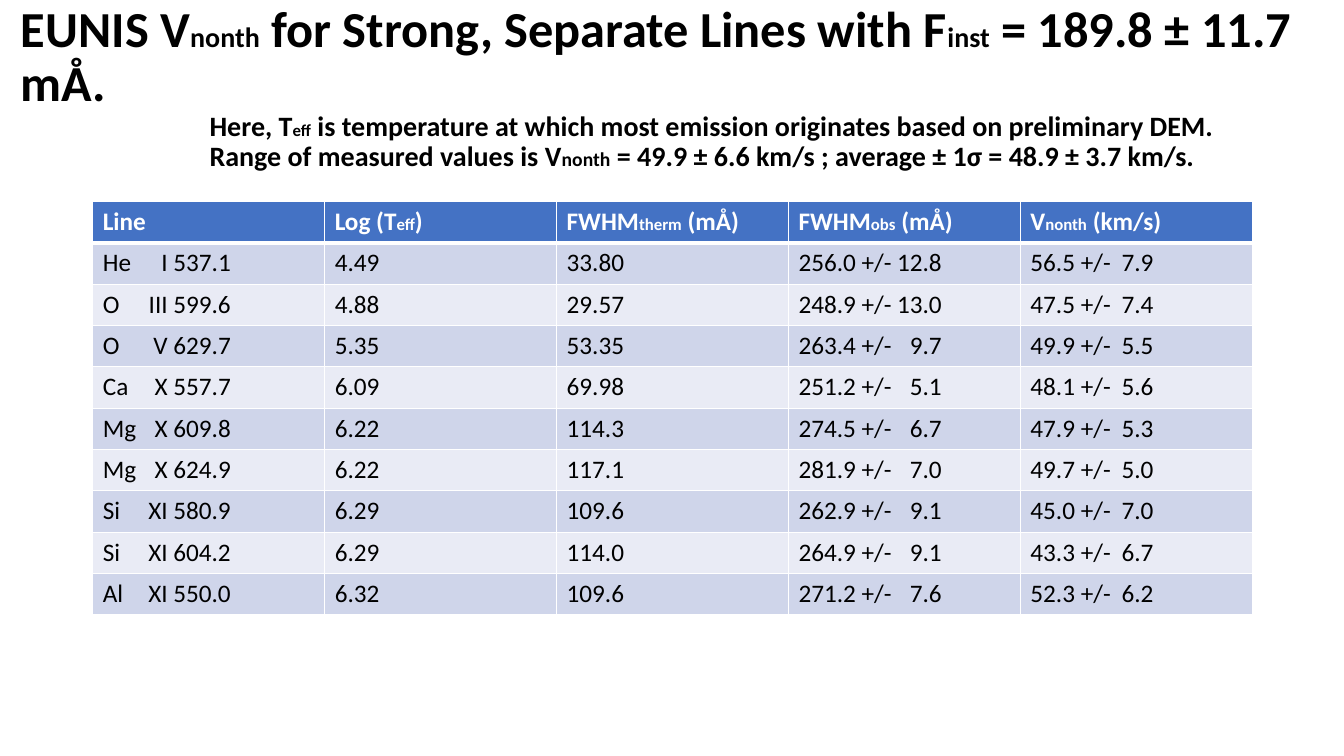
import pptx
import pptx.dml.color
import pptx.enum.text
import pptx.oxml.ns
import pptx.util
from lxml import etree

SLIDE_WIDTH, SLIDE_HEIGHT = 13.33, 7.5
FONT = "Calibri"
BLACK, WHITE, HEADER_BLUE = "000000", "FFFFFF", "4472C4"
BAND_COLORS = ("CFD5EA", "E9EBF5")

# Each line of text is a list of (text, size) pieces; small pieces act as subscripts.
HEADING = [("EUNIS V", 36), ("nonth", 20), (" for Strong, Separate Lines with F", 36),
           ("inst", 20), (" = 189.8 ± 11.7 mÅ.", 36)]
NOTES = [
    [("Here, T", 20), ("eff", 12),
     (" is temperature at which most emission originates based on preliminary DEM.", 20)],
    [("Range of measured values is V", 20), ("nonth", 14),
     (" = 49.9 ± 6.6 km/s ; average ± 1σ = 48.9 ± 3.7 km/s.", 20)],
]
NOTE_INDENT = 1.87

COLUMNS = [
    [("Line", 18)],
    [("Log (T", 18), ("eff", 12), (")", 18)],
    [("FWHM", 18), ("therm", 12), (" (mÅ)", 18)],
    [("FWHM", 18), ("obs", 12), (" (mÅ)", 18)],
    [("V", 18), ("nonth", 12), (" (km/s)", 18)],
]
# Right-aligned tab stop of each column that has one, in inches.
COLUMN_TABS = (1.27, None, None, 1.42, 1.22)
MEASUREMENTS = [
    ("He\tI 537.1", "4.49", "33.80", "256.0 +/-\t12.8", "56.5 +/-\t7.9"),
    ("O\tIII 599.6", "4.88", "29.57", "248.9 +/-\t13.0", "47.5 +/-\t7.4"),
    ("O\tV 629.7", "5.35", "53.35", "263.4 +/-\t9.7", "49.9 +/-\t5.5"),
    ("Ca\tX 557.7", "6.09", "69.98", "251.2 +/-\t5.1", "48.1 +/-\t5.6"),
    ("Mg\tX 609.8", "6.22", "114.3", "274.5 +/-\t6.7", "47.9 +/-\t5.3"),
    ("Mg\tX 624.9", "6.22", "117.1", "281.9 +/-\t7.0", "49.7 +/-\t5.0"),
    ("Si\tXI 580.9", "6.29", "109.6", "262.9 +/-\t9.1", "45.0 +/-\t7.0"),
    ("Si\tXI 604.2", "6.29", "114.0", "264.9 +/-\t9.1", "43.3 +/-\t6.7"),
    ("Al\tXI 550.0", "6.32", "109.6", "271.2 +/-\t7.6", "52.3 +/-\t6.2"),
]
TABLE_LEFT, TABLE_TOP = 0.92, 2
COLUMN_WIDTH, ROW_HEIGHT = 2.3, 0.41


def color(hex_value):
    return pptx.dml.color.RGBColor.from_string(hex_value)


def add_child(parent, tag, **attributes):
    child = etree.SubElement(parent, pptx.oxml.ns.qn(tag))
    for name, value in attributes.items():
        child.set(name, str(value))
    return child


def write_pieces(paragraph, pieces, font_color, bold):
    for text, size in pieces:
        run = paragraph.add_run()
        run.text = text
        run.font.name = FONT
        run.font.size = pptx.util.Pt(size)
        run.font.bold = bold
        run.font.color.rgb = color(font_color)


def add_right_tab(paragraph, position):
    tabs = add_child(paragraph._p.get_or_add_pPr(), "a:tabLst")
    add_child(tabs, "a:tab", pos=pptx.util.Inches(position), algn="r")


def style_cell(cell, fill_color, bottom_width):
    """Give the cell white borders and a solid fill."""
    properties = cell._tc.get_or_add_tcPr()
    for side, width in (("L", 1), ("R", 1), ("T", 1), ("B", bottom_width)):
        line = add_child(properties, f"a:ln{side}", w=pptx.util.Pt(width))
        add_child(add_child(line, "a:solidFill"), "a:srgbClr", val=WHITE)
    cell.fill.solid()
    cell.fill.fore_color.rgb = color(fill_color)


def add_title(slide):
    box = slide.shapes.add_textbox(*map(pptx.util.Inches, (0.11, 0.13, 13.22, 1.49)))
    frame = box.text_frame
    frame.word_wrap = True
    frame.vertical_anchor = pptx.enum.text.MSO_ANCHOR.MIDDLE
    for index, pieces in enumerate([HEADING] + NOTES):
        paragraph = frame.add_paragraph() if index else frame.paragraphs[0]
        paragraph.line_spacing = 0.9
        if index:
            paragraph._p.get_or_add_pPr().set("marL", str(pptx.util.Inches(NOTE_INDENT)))
        write_pieces(paragraph, pieces, BLACK, True)


def add_measurement_table(slide):
    row_count, column_count = len(MEASUREMENTS) + 1, len(COLUMNS)
    table = slide.shapes.add_table(
        row_count, column_count,
        pptx.util.Inches(TABLE_LEFT), pptx.util.Inches(TABLE_TOP),
        pptx.util.Inches(COLUMN_WIDTH * column_count),
        pptx.util.Inches(ROW_HEIGHT * row_count)).table
    for column in table.columns:
        column.width = pptx.util.Inches(COLUMN_WIDTH)
    for row in table.rows:
        row.height = pptx.util.Inches(ROW_HEIGHT)

    for column_index, pieces in enumerate(COLUMNS):
        cell = table.cell(0, column_index)
        style_cell(cell, HEADER_BLUE, 3)
        write_pieces(cell.text_frame.paragraphs[0], pieces, WHITE, True)
    for row_index, values in enumerate(MEASUREMENTS):
        for column_index, (value, tab) in enumerate(zip(values, COLUMN_TABS)):
            cell = table.cell(row_index + 1, column_index)
            style_cell(cell, BAND_COLORS[row_index % 2], 1)
            paragraph = cell.text_frame.paragraphs[0]
            if tab:
                add_right_tab(paragraph, tab)
            write_pieces(paragraph, [(value, 18)], BLACK, False)


def main():
    presentation = pptx.Presentation()
    presentation.slide_width = pptx.util.Inches(SLIDE_WIDTH)
    presentation.slide_height = pptx.util.Inches(SLIDE_HEIGHT)
    slide = presentation.slides.add_slide(presentation.slide_layouts[6])
    add_title(slide)
    add_measurement_table(slide)
    presentation.save("out.pptx")


if __name__ == "__main__":
    main()
